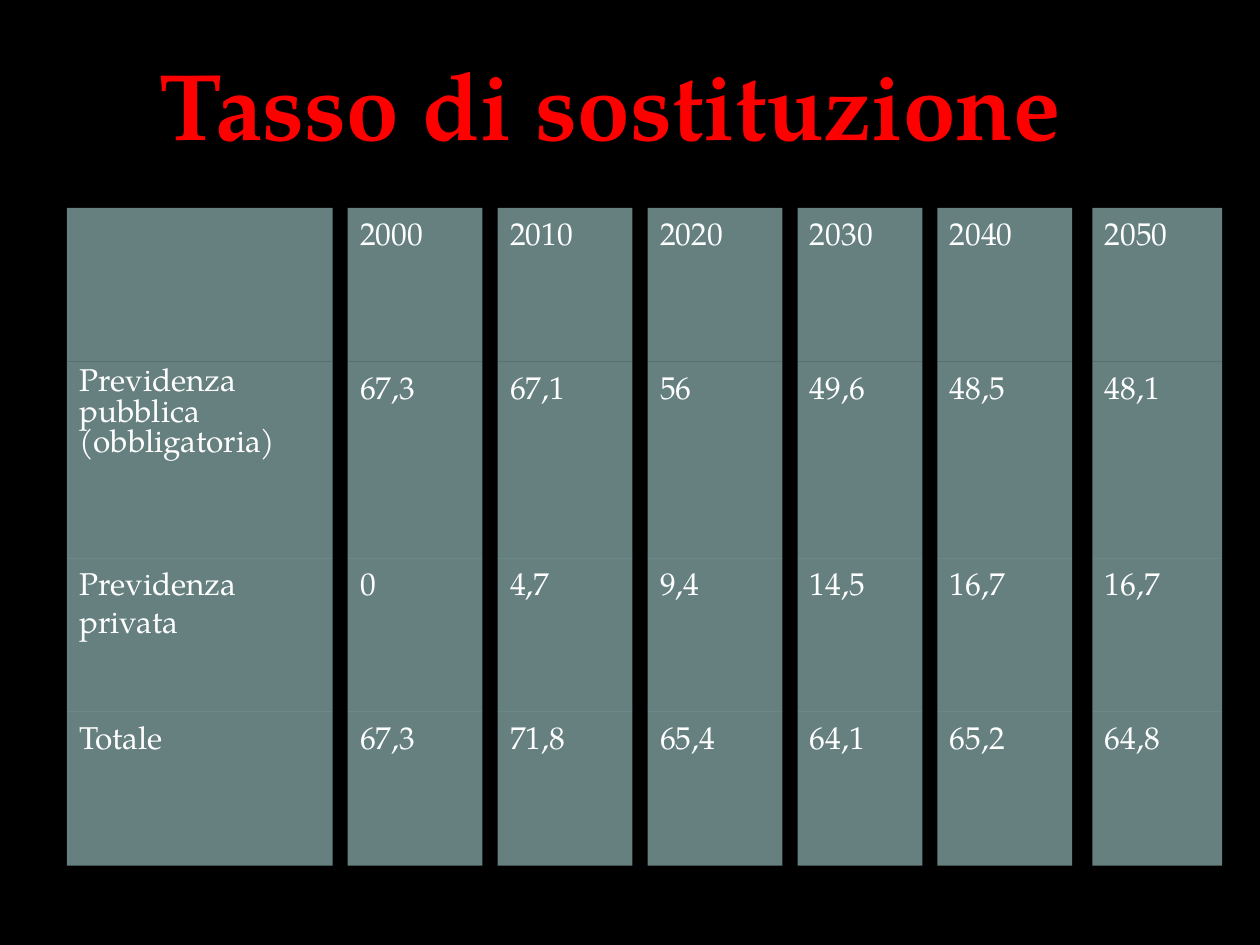
from itertools import accumulate

from lxml.etree import SubElement
from pptx import Presentation
from pptx.dml.color import RGBColor
from pptx.enum.shapes import MSO_SHAPE
from pptx.enum.text import MSO_ANCHOR, MSO_AUTO_SIZE, PP_ALIGN
from pptx.oxml.ns import qn
from pptx.util import Inches, Pt

COLORS = {"background": "000000", "title": "FF0000", "cell": "CCFFFF", "text": "FFFFFF"}
FONT = "TeX Gyre Pagella"

# Grid: column widths with the gap after each, and touching rows
LEFT, TOP = 0.53, 1.65
WIDTHS = [2.11, 1.07, 1.07, 1.07, 0.99, 1.07, 1.03]
GAPS = [0.12] * 5 + [0.16]
HEIGHTS = [1.22, 1.56, 1.22, 1.22]
COL_X = list(accumulate((w + g for w, g in zip(WIDTHS, GAPS)), initial=LEFT))
ROW_Y = list(accumulate(HEIGHTS[:-1], initial=TOP))

ROWS = [
    ["", "2000", "2010", "2020", "2030", "2040", "2050"],
    ["Previdenza pubblica (obbligatoria)", "67,3", "67,1", "56", "49,6", "48,5", "48,1"],
    ["Previdenza privata", "0", "4,7", "9,4", "14,5", "16,7", "16,7"],
    ["Totale", "67,3", "71,8", "65,4", "64,1", "65,2", "64,8"],
]


def rgb(name):
    return RGBColor.from_string(COLORS[name])


class SlideBuilder:
    def __init__(self, prs):
        self.slide = prs.slides.add_slide(prs.slide_layouts[5])
        fill = self.slide.background.fill
        fill.solid()
        fill.fore_color.rgb = rgb("background")
        self.grid = None

    def add_run(self, p, text, size, color, bold=False):
        r = p.add_run()
        r.text = text
        r.font.name = FONT
        r.font.size = Pt(size)
        r.font.bold = bold
        r.font.color.rgb = rgb(color)

    def title(self, text, left, top, width, height):
        sp = self.slide.shapes.title
        sp.left, sp.top = Inches(left), Inches(top)
        sp.width, sp.height = Inches(width), Inches(height)
        tf = sp.text_frame
        tf.word_wrap = False
        tf.auto_size = MSO_AUTO_SIZE.SHAPE_TO_FIT_TEXT
        p = tf.paragraphs[0]
        p.alignment = PP_ALIGN.CENTER
        self.add_run(p, text, 54, "title", bold=True)

    def cell(self, col, row, text, line_spacing=None):
        if self.grid is None:
            self.grid = self.slide.shapes.add_group_shape()
        sp = self.grid.shapes.add_shape(
            MSO_SHAPE.RECTANGLE, Inches(COL_X[col]), Inches(ROW_Y[row]),
            Inches(WIDTHS[col]), Inches(HEIGHTS[row]))
        sp.shadow.inherit = False
        sp.line.fill.background()
        sp.fill.solid()
        sp.fill.fore_color.rgb = rgb("cell")
        # Half-transparent fill
        color = sp.fill._xPr.find(qn("a:solidFill"))[0]
        SubElement(color, qn("a:alpha"), val="50000")
        if text:
            tf = sp.text_frame
            tf.word_wrap = True
            tf.vertical_anchor = MSO_ANCHOR.TOP
            p = tf.paragraphs[0]
            p.alignment = PP_ALIGN.LEFT
            p.line_spacing = line_spacing
            self.add_run(p, text, 18, "text")


def main():
    prs = Presentation()
    prs.slide_width, prs.slide_height = Inches(10), Inches(7.5)
    s = SlideBuilder(prs)

    # Title
    s.title("Tasso di sostituzione", 1.02, 0.31, 7.64, 1.01)

    # Replacement rates by year; the longest label is set tighter
    for row, texts in enumerate(ROWS):
        for col, text in enumerate(texts):
            s.cell(col, row, text, 0.8 if (col, row) == (0, 1) else None)

    prs.save("out.pptx")


if __name__ == "__main__":
    main()
